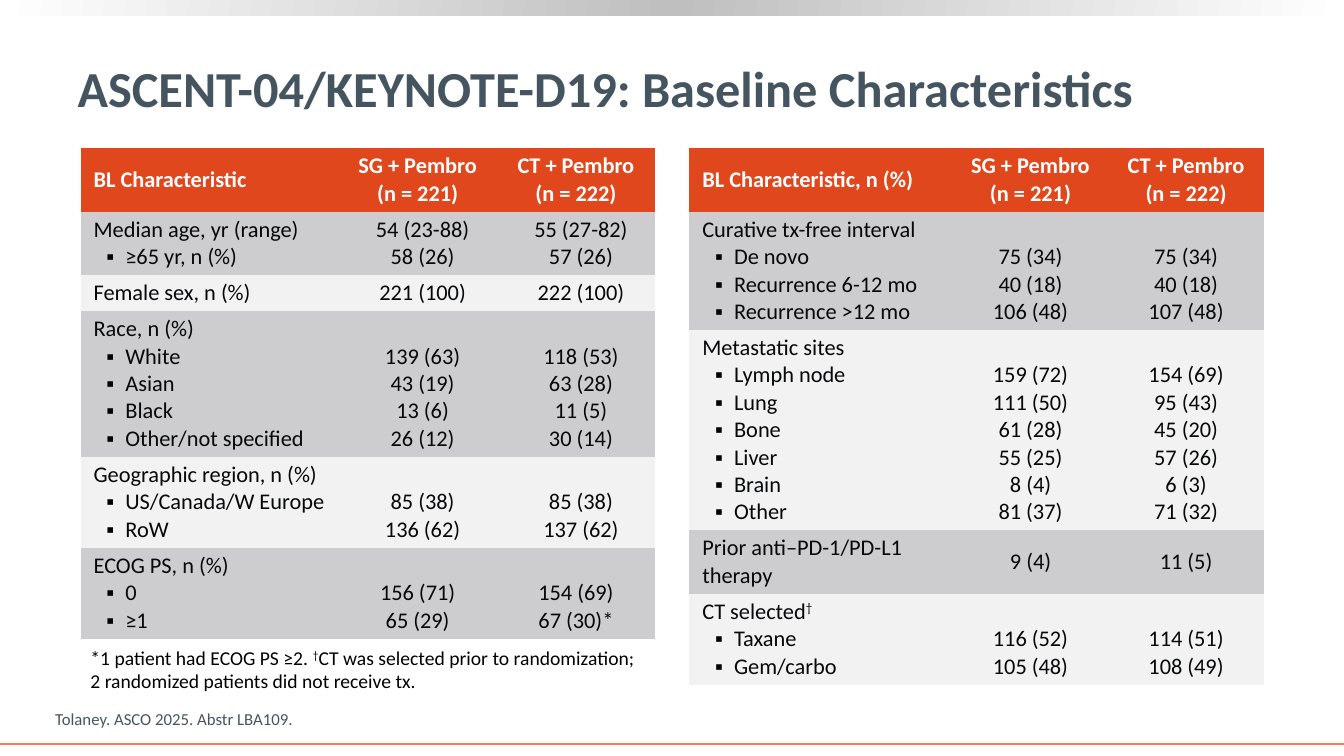
from dataclasses import dataclass

from lxml import etree
from pptx import Presentation
from pptx import util as u
from pptx.dml.color import RGBColor
from pptx.enum import shapes, text
from pptx.oxml import parse_xml
from pptx.oxml.ns import nsdecls, qn

Cm = u.Cm


@dataclass(frozen=True)
class Theme:
    font: str = "Calibri"
    slate: str = "455560"
    ink: str = "07080A"
    black: str = "000000"
    white: str = "FFFFFF"
    header: str = "E1471D"
    bands: tuple = ("CDCDCF", "F2F2F2")
    rule: str = "F47D55"
    bar: str = "BFBFBF"
    title_size: int = 36
    table_size: int = 16
    note_size: int = 14
    source_size: int = 12


THEME = Theme()
LINE_HEIGHT = 0.69
PAD_Y = 0.11
EVEN_PAD = (0.33, 0.33)
SHIFTED_PAD = (0.25, 0)
NO_GRID_STYLE = "{2D5ABB26-0587-4C30-8999-92F81FD0307C}"
ARMS = ["SG + Pembro\n(n = 221)", "CT + Pembro\n(n = 222)"]

# Each row: heading, bulleted items, values per arm, side padding of the values
DEMOGRAPHICS = [
    ("Median age, yr (range)", ["≥65 yr, n (%)"],
     ["54 (23-88)", "58 (26)"], ["55 (27-82)", "57 (26)"], SHIFTED_PAD),
    ("Female sex, n (%)", [], ["221 (100)"], ["222 (100)"], SHIFTED_PAD),
    ("Race, n (%)", ["White", "Asian", "Black", "Other/not specified"],
     ["139 (63)", "43 (19)", "13 (6)", "26 (12)"],
     ["118 (53)", "63 (28)", "11 (5)", "30 (14)"], SHIFTED_PAD),
    ("Geographic region, n (%)", ["US/Canada/W Europe", "RoW"],
     ["85 (38)", "136 (62)"], ["85 (38)", "137 (62)"], SHIFTED_PAD),
    ("ECOG PS, n (%)", ["0", "≥1"],
     ["156 (71)", "65 (29)"], ["154 (69)", "67 (30)*"], EVEN_PAD),
]
DISEASE = [
    ("Curative tx-free interval", ["De novo", "Recurrence 6-12 mo", "Recurrence >12 mo"],
     ["75 (34)", "40 (18)", "106 (48)"], ["75 (34)", "40 (18)", "107 (48)"], EVEN_PAD),
    ("Metastatic sites", ["Lymph node", "Lung", "Bone", "Liver", "Brain", "Other"],
     ["159 (72)", "111 (50)", "61 (28)", "55 (25)", "8 (4)", "81 (37)"],
     ["154 (69)", "95 (43)", "45 (20)", "57 (26)", "6 (3)", "71 (32)"], EVEN_PAD),
    ("Prior anti–PD-1/PD-L1 therapy", [], ["9 (4)"], ["11 (5)"], EVEN_PAD),
    ("CT selected†", ["Taxane", "Gem/carbo"],
     ["116 (52)", "105 (48)"], ["114 (51)", "108 (49)"], EVEN_PAD),
]


def style(para, size, color, bold=False):
    para.font.name = THEME.font
    para.font.size = u.Pt(size)
    para.font.bold = bold
    para.font.color.rgb = RGBColor.from_string(color)


def write(para, words):
    """Fill a paragraph, raising any dagger to superscript."""
    if "†" not in words:
        para.text = words
        return
    before, after = words.split("†")
    for part in (before, "†", after):
        if part:
            span = para.add_run()
            span.text = part
            if part == "†":
                span._r.get_or_add_rPr().set("baseline", "30000")


def add_bullet(para):
    props = para._p.get_or_add_pPr()
    props.set("marL", str(Cm(0.8)))
    props.set("indent", str(-Cm(0.48)))
    color = etree.SubElement(props, qn("a:buClr"))
    etree.SubElement(color, qn("a:srgbClr"), val=THEME.black)
    etree.SubElement(props, qn("a:buFont"), typeface="Arial")
    etree.SubElement(props, qn("a:buChar"), char="▪")


def fill_cell(cell, lines, fill, color, pad=EVEN_PAD, bold=False, centred=False,
              bulleted=False, anchor=text.MSO_ANCHOR.MIDDLE):
    """Write one paragraph per line; bulleted marks all but the first."""
    cell.fill.solid()
    cell.fill.fore_color.rgb = RGBColor.from_string(fill)
    cell.vertical_anchor = anchor
    cell.margin_left, cell.margin_right = (Cm(side) for side in pad)
    cell.margin_top = cell.margin_bottom = Cm(PAD_Y)
    frame = cell.text_frame
    for index, line in enumerate(lines):
        para = frame.add_paragraph() if index else frame.paragraphs[0]
        if bulleted and index:
            add_bullet(para)
        if centred:
            para.alignment = text.PP_ALIGN.CENTER
        style(para, THEME.table_size, color, bold)
        write(para, line)


def add_baseline_table(page, left, widths, heading, rows):
    line_counts = [2] + [max(1 + len(items), 2 if len(label) > 26 else 1)
                         for label, items, *_ in rows]
    heights = [Cm(LINE_HEIGHT * count + 2 * PAD_Y) for count in line_counts]
    frame = page.shapes.add_table(len(heights), len(widths), Cm(left), Cm(3.73),
                                  Cm(sum(widths)), sum(heights))
    next(frame.element.iter(qn("a:tableStyleId"))).text = NO_GRID_STYLE
    table = frame.table
    table.horz_banding = False
    for column, width in zip(table.columns, widths):
        column.width = Cm(width)
    for row, height in zip(table.rows, heights):
        row.height = height

    for index, words in enumerate([heading] + ARMS):
        fill_cell(table.cell(0, index), [words], THEME.header, THEME.white,
                  bold=True, centred=index > 0)
    for number, (label, items, *arms, pad) in enumerate(rows, 1):
        band = THEME.bands[(number - 1) % 2]
        fill_cell(table.cell(number, 0), [label] + items, band, THEME.ink, bulleted=True)
        for index, values in enumerate(arms, 1):
            below_label = len(values) < 1 + len(items)
            anchor = text.MSO_ANCHOR.BOTTOM if below_label else text.MSO_ANCHOR.MIDDLE
            fill_cell(table.cell(number, index), values, band, THEME.ink, pad,
                      centred=True, anchor=anchor)


def add_text(page, words, left, top, width, height, size, color,
             anchor=text.MSO_ANCHOR.TOP):
    box = page.shapes.add_textbox(Cm(left), Cm(top), Cm(width), Cm(height))
    box.text_frame.word_wrap = True
    box.text_frame.vertical_anchor = anchor
    para = box.text_frame.paragraphs[0]
    style(para, size, color)
    write(para, words)


def add_title(page, words):
    title = page.shapes.title
    title.left, title.top, title.width, title.height = Cm(1.7), Cm(0.66), Cm(30.2), Cm(3.07)
    title.text_frame.vertical_anchor = text.MSO_ANCHOR.MIDDLE
    para = title.text_frame.paragraphs[0]
    para.alignment = text.PP_ALIGN.LEFT
    style(para, THEME.title_size, THEME.slate, bold=True)
    write(para, words)


def add_top_bar(page, width):
    bar = page.shapes.add_shape(shapes.MSO_SHAPE.RECTANGLE, 0, 0, width, Cm(0.4))
    bar.shadow.inherit = False
    bar.line.fill.background()
    stops = "".join(
        f'<a:gs pos="{place}"><a:srgbClr val="{color}"/></a:gs>'
        for place, color in ((0, THEME.white), (50000, THEME.bar), (100000, THEME.white)))
    gradient = parse_xml(f'<a:gradFill {nsdecls("a")} rotWithShape="1"><a:gsLst>{stops}'
                         '</a:gsLst><a:lin ang="11400000" scaled="0"/></a:gradFill>')
    bar._element.spPr.find(qn("a:prstGeom")).addnext(gradient)


def add_bottom_rule(page, width):
    rule = page.shapes.add_connector(shapes.MSO_CONNECTOR.STRAIGHT,
                                     0, Cm(18.75), width, Cm(18.75))
    rule.line.color.rgb = RGBColor.from_string(THEME.rule)
    rule.line.width = u.Pt(1.5)
    etree.SubElement(rule._element.spPr, qn("a:effectLst"))


def main():
    deck = Presentation()
    deck.slide_width, deck.slide_height = Cm(33.87), Cm(19.05)
    page = deck.slides.add_slide(deck.slide_layouts.get_by_name("Title Only"))
    add_top_bar(page, deck.slide_width)
    add_bottom_rule(page, deck.slide_width)
    add_title(page, "ASCENT-04/KEYNOTE-D19: Baseline Characteristics")
    add_text(page, "Tolaney. ASCO 2025. Abstr LBA109.", 1.14, 17.73, 22.25, 0.77,
             THEME.source_size, THEME.slate, text.MSO_ANCHOR.BOTTOM)
    add_baseline_table(page, 2.03, (6.5, 3.99, 3.99), "BL Characteristic", DEMOGRAPHICS)
    add_baseline_table(page, 17.37, (6.64, 3.92, 3.92), "BL Characteristic, n (%)", DISEASE)
    add_text(page, "*1 patient had ECOG PS ≥2. †CT was selected prior to randomization; "
             "2 randomized patients did not receive tx.", 2.03, 16.15, 14.53, 1.45,
             THEME.note_size, THEME.black)
    deck.save("out.pptx")


if __name__ == "__main__":
    main()
